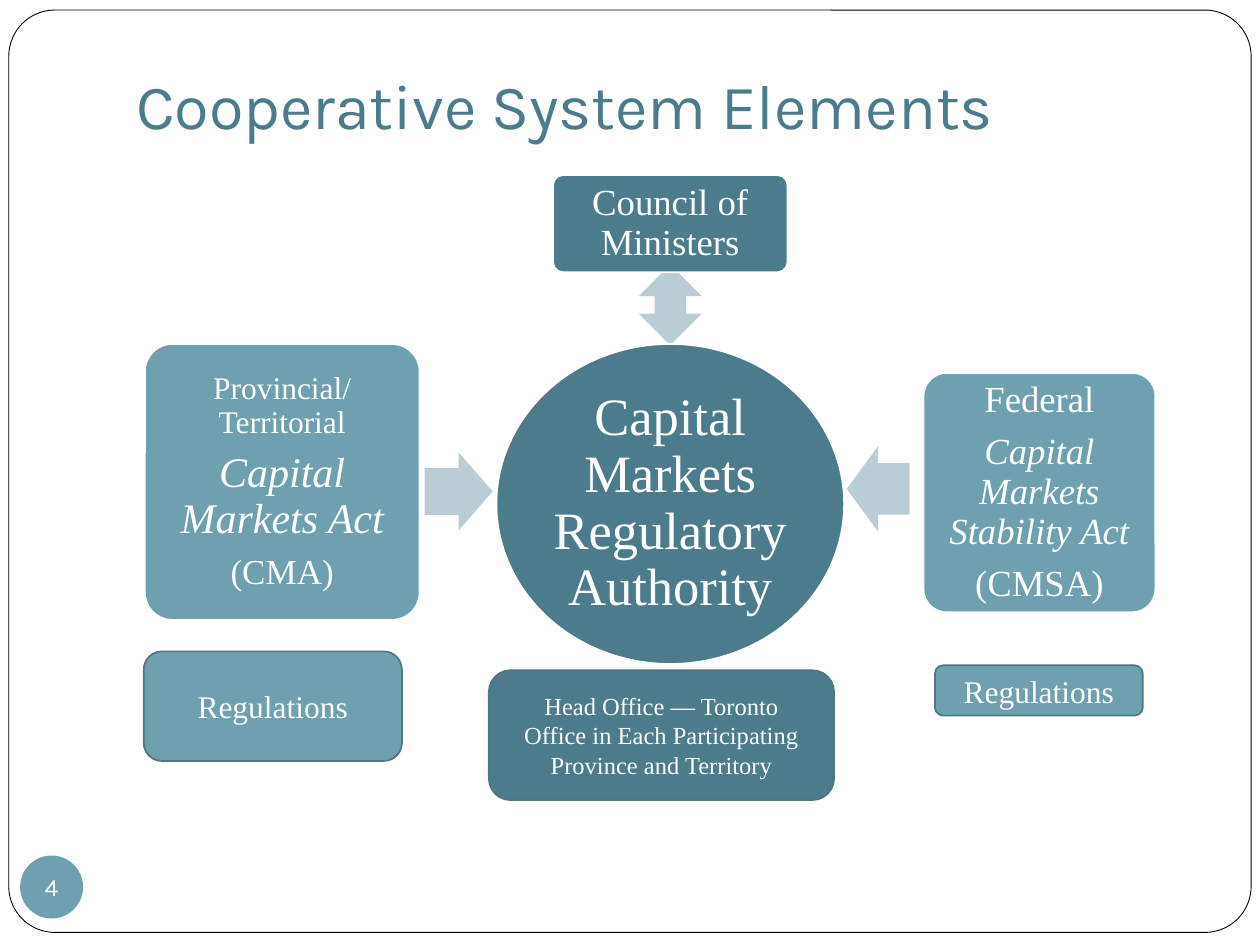
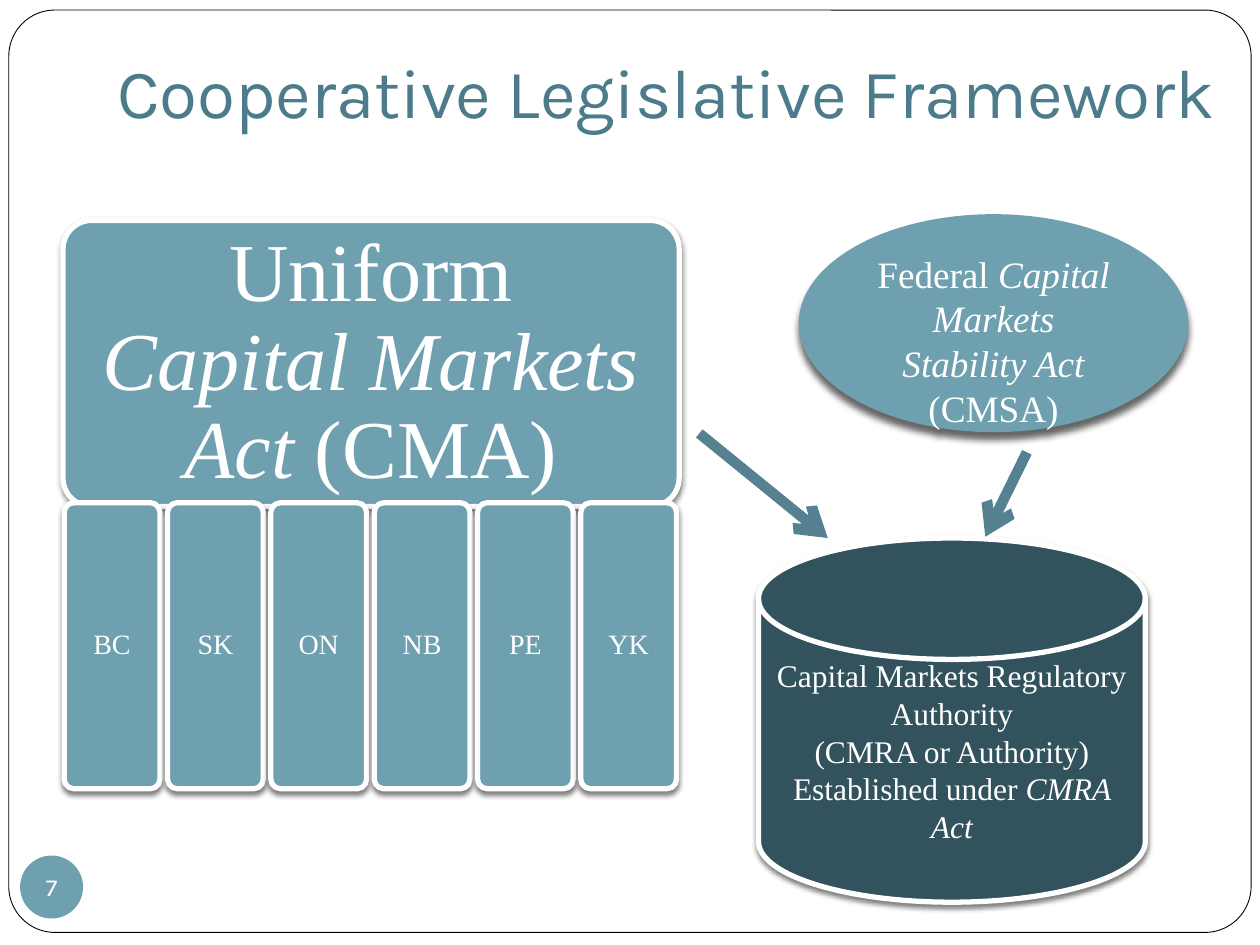
import pptx
import pptx.util
import pptx.dml.color
import pptx.enum.shapes
import pptx.enum.text
import pptx.oxml
import pptx.oxml.ns
import lxml.etree

Inches = pptx.util.Inches
Pt = pptx.util.Pt
SHAPE = pptx.enum.shapes.MSO_SHAPE
ANCHOR = pptx.enum.text.MSO_ANCHOR
ALIGN = pptx.enum.text.PP_ALIGN

COLORS = {
    "white": "FFFFFF", "black": "000000", "teal": "4C7C8B", "light": "6EA0B0",
    "pale": "BACDD4", "dark": "32525D", "outline": "517682", "arrow": "558190",
}
TITLE_FONT = "Karla"
BODY_FONT = "Times New Roman"
SOFT_SHADOW = {"alpha": 50, "blur": 3, "distance": 2}
DEEP_SHADOW = {"alpha": 60, "blur": 4, "distance": 4}

# Text between asterisks is italic; each paragraph is (text, size, space after).
ELEMENTS = {
    "title": ("Cooperative System Elements", 36, (0.98, 0.29, 8.5, 0.94)),
    "number": "4",
    "arrows": [
        (SHAPE.RIGHT_ARROW, (3.37, 3.59, 0.54, 0.62), (0.6, 0.5)),
        (SHAPE.UP_DOWN_ARROW, (5.07, 2.1, 0.5, 0.64), (0.5, 0.5)),
        (SHAPE.LEFT_ARROW, (6.72, 3.54, 0.5, 0.68), (0.6, 0.5)),
    ],
    "bodies": [
        (SHAPE.OVAL, (3.94, 2.73, 2.76, 2.54), "teal",
         [("Capital Markets Regulatory Authority", 30, 0)]),
        (SHAPE.ROUNDED_RECTANGLE, (1.15, 2.73, 2.18, 2.19), "light",
         [("Provincial/Territorial", 18, 6.3), ("*Capital*", 24, 0),
          ("*Markets Act*", 24, 6.7), ("(CMA)", 20, 6.7)]),
        (SHAPE.ROUNDED_RECTANGLE, (4.39, 1.39, 1.86, 0.77), "teal",
         [("Council of Ministers", 21, 0)]),
        (SHAPE.ROUNDED_RECTANGLE, (7.33, 2.96, 1.84, 1.9), "light",
         [("Federal", 21, 7.35), ("*Capital Markets Stability Act*", 21, 7.35),
          ("(CMSA)", 21, 7.35)]),
    ],
    "notes": [
        ((3.88, 5.32, 2.74, 1.03), "teal",
         [("Head Office — Toronto", 14, 0),
          ("Office in Each Participating Province and Territory", 14, 0)]),
        ((1.14, 5.17, 2.05, 0.87), "light", [("Regulations", 18, 0)]),
        ((7.42, 5.28, 1.65, 0.4), "light", [("Regulations", 18, 0)]),
    ],
}
FRAMEWORK = {
    "title": ("Cooperative Legislative Framework", 39.6, (0.83, 0.36, 8.98, 0.79)),
    "number": "7",
    "federal": [("Federal *Capital Markets Stability Act* (CMSA)", 21.3, 0)],
    "authority": [("Capital Markets Regulatory Authority", 18, 0),
                  ("(CMRA or Authority)", 18, 0),
                  ("Established under *CMRA Act*", 18, 0)],
    "uniform": [("Uniform *Capital Markets Act* (CMA)", 47, 0)],
    "jurisdictions": ["BC", "SK", "ON", "NB", "PE", "YK"],
    "arrows": [((5.55, 3.44), (6.57, 4.27)), ((8.15, 3.59), (7.82, 4.26))],
}


def rgb(name):
    return pptx.dml.color.RGBColor.from_string(COLORS[name])


def add_xml(parent, tag, **attributes):
    return lxml.etree.SubElement(parent, pptx.oxml.ns.qn(tag), attributes)


def place(shape, box):
    shape.left, shape.top, shape.width, shape.height = map(Inches, box)


def set_insets(frame, left, top, right, bottom):
    frame.margin_left, frame.margin_top = Inches(left), Inches(top)
    frame.margin_right, frame.margin_bottom = Inches(right), Inches(bottom)


def add_shape(slide, kind, box, fill=None, line=None, width=1, adjustments=(), shadow=None):
    shape = slide.shapes.add_shape(kind, *map(Inches, box))
    shape.shadow.inherit = False
    for index, value in enumerate(adjustments):
        shape.adjustments[index] = value
    if fill:
        shape.fill.solid()
        shape.fill.fore_color.rgb = rgb(fill)
    else:
        shape.fill.background()
    if line:
        shape.line.color.rgb = rgb(line)
        shape.line.width = Pt(width)
    else:
        shape.line.fill.background()
    if shadow:
        effects = shape._element.spPr.find(pptx.oxml.ns.qn("a:effectLst"))
        outer = add_xml(effects, "a:outerShdw", blurRad=str(Pt(shadow["blur"])),
                        dist=str(Pt(shadow["distance"])), dir="5400000", rotWithShape="0")
        color = add_xml(outer, "a:srgbClr", val=COLORS["black"])
        add_xml(color, "a:alpha", val=str(shadow["alpha"] * 1000))
    return shape


def write(shape, paragraphs, insets=(0.1, 0.05, 0.1, 0.05), spacing=1.0, font=BODY_FONT):
    frame = shape.text_frame
    frame.word_wrap = True
    frame.vertical_anchor = ANCHOR.MIDDLE
    set_insets(frame, *insets)
    for index, (text, size, space_after) in enumerate(paragraphs):
        paragraph = frame.add_paragraph() if index else frame.paragraphs[0]
        paragraph.alignment = ALIGN.CENTER
        paragraph.line_spacing = spacing
        paragraph.space_after = Pt(space_after)
        paragraph.font.name = font
        paragraph.font.size = Pt(size)
        paragraph.font.color.rgb = rgb("white")
        for position, part in enumerate(text.split("*")):
            if part:
                run = paragraph.add_run()
                run.text = part
                if position % 2:
                    run.font.italic = True


def add_slide(presentation, content):
    slide = presentation.slides.add_slide(presentation.slide_layouts[5])
    add_shape(slide, SHAPE.ROUNDED_RECTANGLE, (0.07, 0.08, 9.86, 7.32),
              line="black", width=0.5, adjustments=[0.05])
    text, size, box = content["title"]
    title = slide.shapes.title
    place(title, box)
    frame = title.text_frame
    frame.text = text
    frame.word_wrap = True
    frame.auto_size = pptx.enum.text.MSO_AUTO_SIZE.NONE
    frame.vertical_anchor = ANCHOR.BOTTOM
    set_insets(frame, 0.1, 0.05, 0.1, 0.1)
    paragraph = frame.paragraphs[0]
    paragraph.alignment = ALIGN.LEFT
    paragraph.font.name = TITLE_FONT
    paragraph.font.size = Pt(size)
    paragraph.font.color.rgb = rgb("teal")
    badge = add_shape(slide, SHAPE.OVAL, (0.16, 6.79, 0.5, 0.5), "light")
    write(badge, [(content["number"], 14, 0)], (0, 0, 0, 0), font=TITLE_FONT)
    return slide


def build_elements(presentation):
    slide = add_slide(presentation, ELEMENTS)
    for kind, box, adjustments in ELEMENTS["arrows"]:
        add_shape(slide, kind, box, "pale", adjustments=adjustments)
    for kind, box, fill, paragraphs in ELEMENTS["bodies"]:
        rounded = kind == SHAPE.ROUNDED_RECTANGLE
        body = add_shape(slide, kind, box, fill, "white",
                         adjustments=[0.1] if rounded else [])
        write(body, paragraphs, (0.04,) * 4 if rounded else (0.02,) * 4, 0.9)
    for box, fill, paragraphs in ELEMENTS["notes"]:
        note = add_shape(slide, SHAPE.ROUNDED_RECTANGLE, box, fill, "outline")
        write(note, paragraphs)


def build_framework(presentation):
    slide = add_slide(presentation, FRAMEWORK)
    federal = add_shape(slide, SHAPE.OVAL, (6.34, 1.7, 3.09, 1.73), "light",
                        shadow=DEEP_SHADOW)
    write(federal, FRAMEWORK["federal"], (0.1, 0.32, 0.1, 0.05))
    authority = add_shape(slide, SHAPE.FLOWCHART_MAGNETIC_DISK, (6.02, 4.27, 3.07, 2.89),
                          "dark", "white", 3, shadow=SOFT_SHADOW)
    write(authority, FRAMEWORK["authority"])

    def add_panel(box, paragraphs, inset):
        panel = add_shape(slide, SHAPE.ROUNDED_RECTANGLE, box, "light", "white", 3,
                          [0.1], SOFT_SHADOW)
        write(panel, paragraphs, (inset,) * 4, 0.9)

    add_panel((0.5, 1.75, 4.89, 2.27), FRAMEWORK["uniform"], 0.2)
    for index, name in enumerate(FRAMEWORK["jurisdictions"]):
        add_panel((0.51 + 0.82 * index, 3.99, 0.76, 2.27), [(name, 16, 0)], 0.07)

    for start, end in FRAMEWORK["arrows"]:
        arrow = slide.shapes.add_connector(pptx.enum.shapes.MSO_CONNECTOR.STRAIGHT,
                                           *map(Inches, start + end))
        arrow.line.color.rgb = rgb("arrow")
        arrow.line.width = Pt(6)
        add_xml(arrow.line._get_or_add_ln(), "a:tailEnd", type="arrow")
        add_xml(arrow._element.spPr, "a:effectLst")


def main():
    presentation = pptx.Presentation()
    presentation.slide_width = Inches(10)
    presentation.slide_height = Inches(7.5)
    build_elements(presentation)
    build_framework(presentation)
    presentation.save("out.pptx")


if __name__ == "__main__":
    main()
